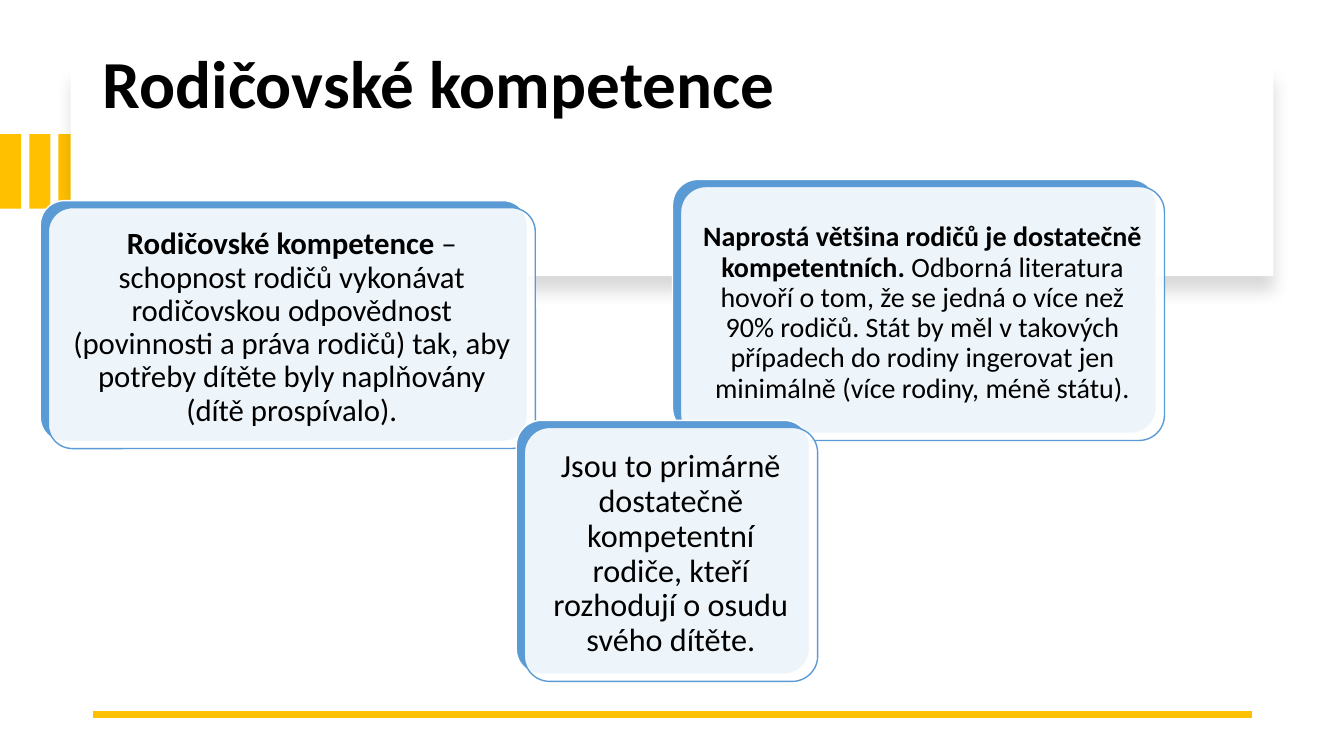
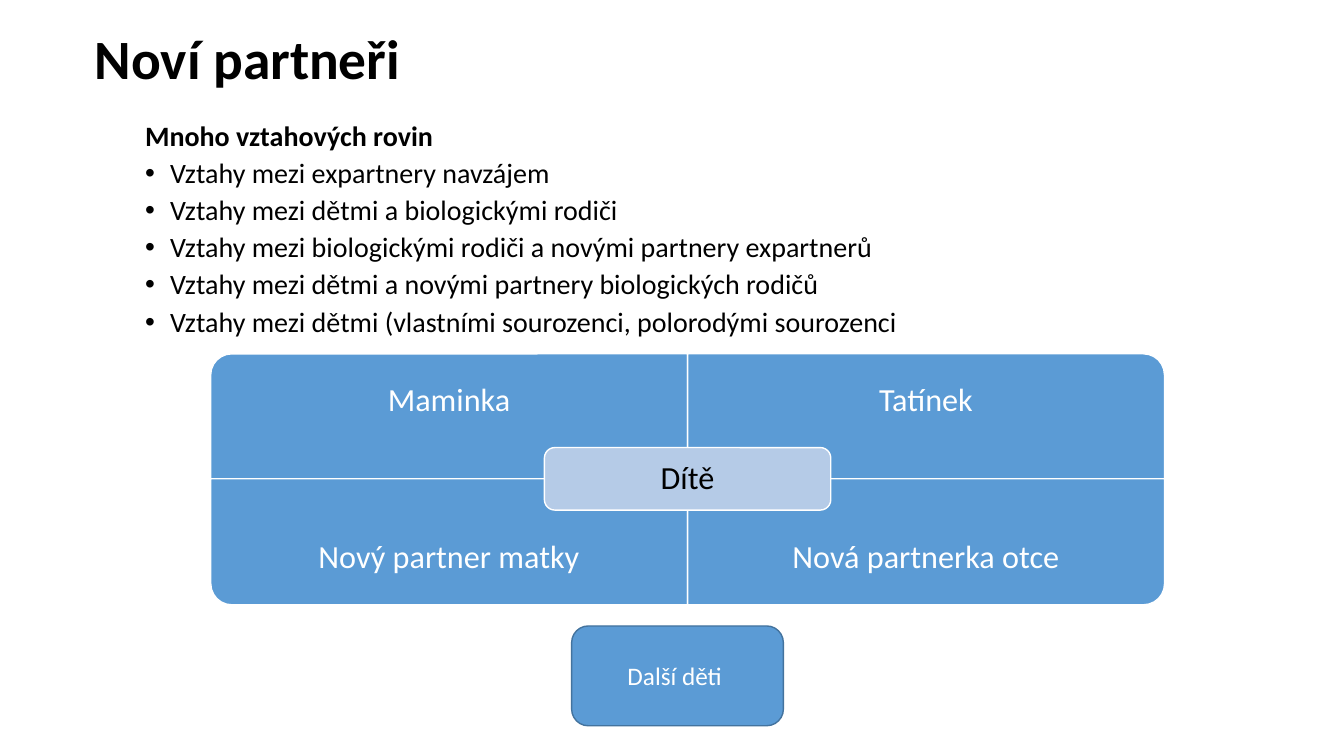
import pptx
import pptx.util
import pptx.dml.color
import pptx.enum.shapes
import pptx.enum.text
import pptx.oxml.ns
import lxml.etree

RGBColor = pptx.dml.color.RGBColor
SHAPE = pptx.enum.shapes.MSO_SHAPE
ALIGN = pptx.enum.text.PP_ALIGN
ANCHOR = pptx.enum.text.MSO_ANCHOR
qn = pptx.oxml.ns.qn
SubElement = lxml.etree.SubElement

BLACK = RGBColor(0x00, 0x00, 0x00)
WHITE = RGBColor(0xFF, 0xFF, 0xFF)
GOLD = RGBColor(0xFF, 0xC0, 0x00)
BLUE = RGBColor(0x5B, 0x9B, 0xD5)
PALE_BLUE = RGBColor(0xB5, 0xCB, 0xE7)
DARK_BLUE = RGBColor(0x43, 0x73, 0x9E)
FONT = "Calibri"
PX = 9144


def add_block(slide, kind, box, fill, line=None):
    block = slide.shapes.add_shape(kind, *[n * PX for n in box])
    block.shadow.inherit = False
    block.fill.solid()
    block.fill.fore_color.rgb = fill
    if line is None:
        block.line.fill.background()
    else:
        block.line.color.rgb = line
        block.line.width = pptx.util.Pt(1)
    return block


def format_text(frame, size, color, align=ALIGN.CENTER, anchor=ANCHOR.MIDDLE,
                inset=None, bold=None, spacing=0.9):
    frame.word_wrap = True
    frame.auto_size = pptx.enum.text.MSO_AUTO_SIZE.NONE
    frame.vertical_anchor = anchor
    if inset is not None:
        frame.margin_left = frame.margin_right = inset * PX
        frame.margin_top = frame.margin_bottom = inset * PX
    for paragraph in frame.paragraphs:
        paragraph.alignment = align
        paragraph.line_spacing = spacing
        paragraph.font.name = FONT
        paragraph.font.size = pptx.util.Pt(size)
        paragraph.font.color.rgb = color
        if bold is not None:
            paragraph.font.bold = bold


deck = pptx.Presentation()
deck.slide_width = 1333 * PX
deck.slide_height = 750 * PX
title_only = deck.slide_layouts[5]

competence = deck.slides.add_slide(title_only)
for column in range(3):
    add_block(competence, SHAPE.RECTANGLE, (column * 29, 133, 21, 74), GOLD)

panel = add_block(competence, SHAPE.RECTANGLE, (70, 67, 1193, 207), WHITE)
effects = panel.element.spPr.find(qn("a:effectLst"))
shadow = SubElement(effects, qn("a:outerShdw"), blurRad=str(11 * 12700),
                    dist=str(10 * 12700), dir="5400000", algn="t", rotWithShape="0")
shadow_color = SubElement(shadow, qn("a:srgbClr"), val="000000")
SubElement(shadow_color, qn("a:alpha"), val="15000")

rule = competence.shapes.add_connector(
    pptx.enum.shapes.MSO_CONNECTOR.STRAIGHT, 1242 * PX, 709 * PX, 92 * PX, 709 * PX)
rule.line.color.rgb = GOLD
rule.line.width = pptx.util.Pt(4.5)
SubElement(rule.element.spPr, qn("a:effectLst"))

cards = [
    ((40, 199, 483, 239), 22, 9, "Rodičovské kompetence ",
     "– schopnost rodičů vykonávat rodičovskou odpovědnost (povinnosti a práva rodičů) "
     "tak, aby potřeby dítěte byly naplňovány\n(dítě prospívalo)."),
    ((667, 178, 480, 252), 20, 8, "Naprostá většina rodičů je dostatečně kompetentních. ",
     "Odborná literatura hovoří o tom, že se jedná o více než 90% rodičů. Stát by měl "
     "v takových případech do rodiny ingerovat jen minimálně (více rodiny, méně státu)."),
    ((512, 417, 291, 252), 23, 10, "",
     "Jsou to primárně dostatečně kompetentní rodiče, kteří rozhodují o osudu svého dítěte."),
]
for (left, top, width, height), size, inset, lead, body in cards:
    back = add_block(competence, SHAPE.ROUNDED_RECTANGLE, (left, top, width, height), BLUE, WHITE)
    front = add_block(competence, SHAPE.ROUNDED_RECTANGLE,
                      (left + 8, top + 7, width, height), WHITE, BLUE)
    back.adjustments[0] = front.adjustments[0] = 0.1
    front_color = front.element.spPr.find(qn("a:solidFill"))[0]
    SubElement(front_color, qn("a:alpha"), val="90000")
    paragraph = front.text_frame.paragraphs[0]
    if lead:
        lead_run = paragraph.add_run()
        lead_run.text = lead
        lead_run.font.bold = True
    for index, line in enumerate(body.split("\n")):
        if index:
            paragraph.add_line_break()
        paragraph.add_run().text = line
    format_text(front.text_frame, size, BLACK, inset=inset)

partners = deck.slides.add_slide(title_only)
relations = partners.shapes.add_textbox(84 * PX, 116 * PX, 1150 * PX, 230 * PX).text_frame
relations.text = "\n".join([
    "Mnoho vztahových rovin",
    "Vztahy mezi expartnery navzájem",
    "Vztahy mezi dětmi a biologickými rodiči",
    "Vztahy mezi biologickými rodiči a novými partnery expartnerů",
    "Vztahy mezi dětmi a novými partnery biologických rodičů",
    "Vztahy mezi dětmi (vlastními sourozenci, polorodými sourozenci",
])
heading, *bullets = relations.paragraphs
heading._p.get_or_add_pPr().set("marL", str(50 * PX))
for bullet in bullets:
    bullet.space_before = pptx.util.Pt(5)
    properties = bullet._p.get_or_add_pPr()
    properties.set("marL", str(75 * PX))
    properties.set("indent", str(-25 * PX))
    SubElement(properties, qn("a:buFont"), typeface="Arial")
    SubElement(properties, qn("a:buChar"), char="•")
format_text(relations, 20, BLACK, align=ALIGN.LEFT, anchor=ANCHOR.TOP)
heading.font.bold = True

grid_left, grid_top, cell_width, cell_height, label_height = 209, 351, 473, 125, 93
family = [
    ("Maminka", 0, 0, 270),
    ("Tatínek", 1, 0, 0),
    ("Nový partner matky", 0, 1, 180),
    ("Nová partnerka otce", 1, 1, 90),
]
for member, column, row, rotation in family:
    left = grid_left + column * cell_width
    top = grid_top + row * (cell_height - 1)
    width, height = cell_width, cell_height
    if rotation in (90, 270):
        width, height = height, width
    cell = add_block(partners, SHAPE.ROUND_1_RECTANGLE,
                     (left + (cell_width - width) // 2, top + (cell_height - height) // 2,
                      width, height), BLUE, WHITE)
    cell.rotation = rotation
    label_top = top + row * (cell_height - label_height)
    label = partners.shapes.add_textbox(
        left * PX, label_top * PX, cell_width * PX, label_height * PX).text_frame
    label.text = member
    format_text(label, 23, WHITE, inset=18)

child = add_block(partners, SHAPE.ROUNDED_RECTANGLE, (540, 444, 284, 62), PALE_BLUE, WHITE)
child.text_frame.text = "Dítě"
format_text(child.text_frame, 23, BLACK, inset=10)

siblings = add_block(partners, SHAPE.ROUNDED_RECTANGLE, (567, 621, 210, 99), BLUE, DARK_BLUE)
siblings.text_frame.text = "Další děti "
format_text(siblings.text_frame, 18, WHITE, spacing=1.0)

titles = [
    (competence, "Rodičovské kompetence", (92, 43, 1067, 87), 48),
    (partners, "Noví partneři", (84, 30, 1175, 62), 39.6),
]
for slide, heading_text, box, size in titles:
    title = slide.shapes.title
    title.left, title.top, title.width, title.height = [n * PX for n in box]
    title.text_frame.text = heading_text
    format_text(title.text_frame, size, BLACK, align=ALIGN.LEFT, bold=True)
    slide.shapes.element.append(title.element)

deck.save("out.pptx")
